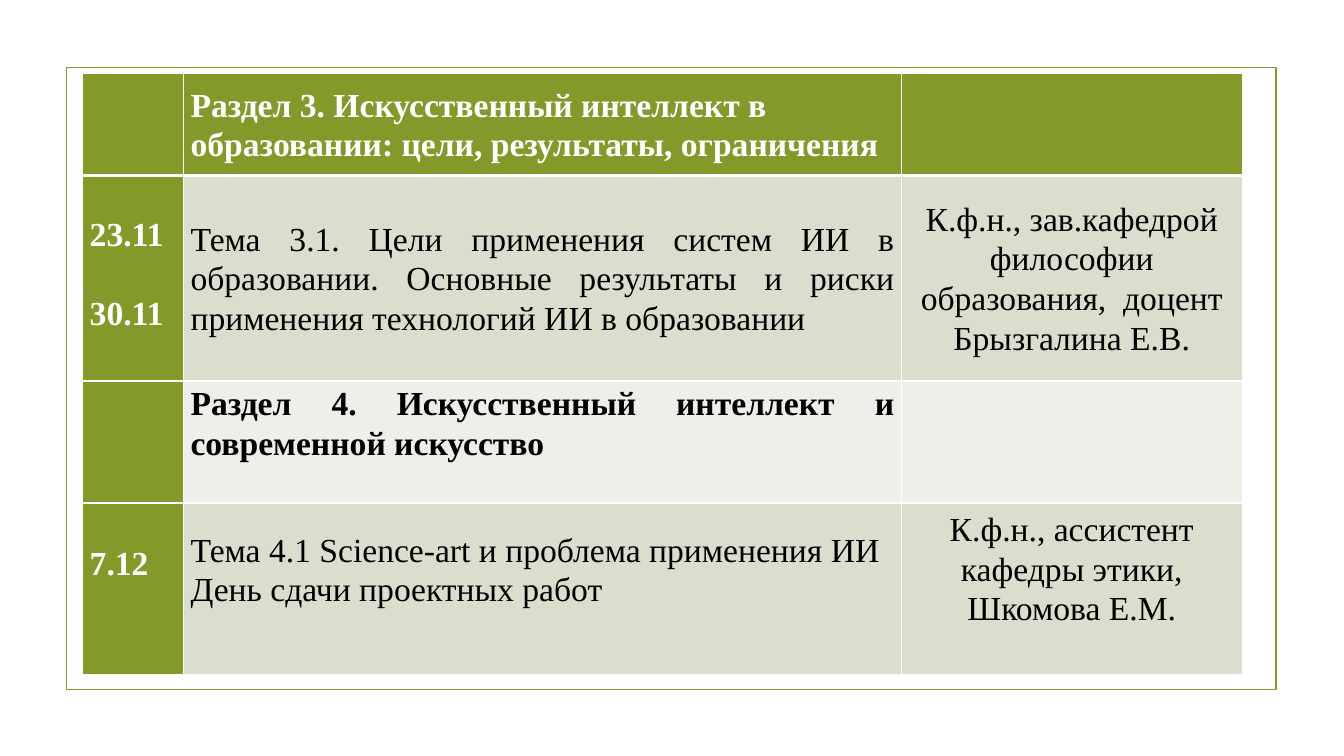
from lxml import etree
from pptx import Presentation
from pptx.dml.color import RGBColor
from pptx.enum.shapes import MSO_SHAPE
from pptx.enum.text import MSO_ANCHOR, PP_ALIGN
from pptx.oxml import parse_xml
from pptx.oxml.ns import nsdecls
from pptx.util import Inches, Pt

COLORS = {"olive": "83992A", "sage": "D9DECD", "pale": "EDEFE8",
          "white": "FFFFFF", "black": "000000"}
LEFT, JUSTIFY, CENTER = PP_ALIGN.LEFT, PP_ALIGN.JUSTIFY, PP_ALIGN.CENTER


def rgb(name):
    return RGBColor.from_string(COLORS[name])


def add_borders(cell, top, bottom):
    props = cell._tc.get_or_add_tcPr()
    widths = {"lnL": 1, "lnR": 1, "lnT": top, "lnB": bottom}
    for position, (side, width) in enumerate(widths.items()):
        props.insert(position, parse_xml(
            f'<a:{side} {nsdecls("a")} w="{Pt(width)}"><a:solidFill>'
            f'<a:srgbClr val="{COLORS["white"]}"/></a:solidFill></a:{side}>'))


prs = Presentation()
prs.slide_width, prs.slide_height = Inches(13.33), Inches(7.5)
slide = prs.slides.add_slide(prs.slide_layouts[6])

# Frame around the schedule
frame = slide.shapes.add_shape(MSO_SHAPE.RECTANGLE, Inches(0.66), Inches(0.67),
                               Inches(12), Inches(6.17))
frame.shadow.inherit = False
frame.fill.background()
frame.line.color.rgb = rgb("olive")
frame.line.width = Pt(1.25)

# Schedule content: row height, row fill, then date, topic and lecturer
# as (paragraphs, alignment, bold, top margin, bottom margin)
empty = ([], LEFT, False, 0, 0)
schedule = [
    (1.01, "olive", [
        empty,
        (["Раздел 3. Искусственный интеллект в образовании: цели, результаты, "
          "ограничения"], LEFT, True, 0, 0),
        empty]),
    (2.04, "sage", [
        (["23.11", "30.11"], JUSTIFY, True, 0.38, 0),
        (["Тема 3.1. Цели применения систем ИИ в образовании. Основные результаты "
          "и риски применения технологий ИИ в образовании"], JUSTIFY, False, 0, 0),
        (["К.ф.н., зав.кафедрой философии образования,  доцент Брызгалина Е.В."],
         CENTER, False, 0, 0)]),
    (1.21, "pale", [
        empty,
        (["Раздел 4. Искусственный интеллект и современной искусство"],
         JUSTIFY, True, 0, 0.38),
        empty]),
    (1.7, "sage", [
        (["7.12"], JUSTIFY, True, 0.4, 0),
        (["Тема 4.1 Science-art и проблема применения ИИ",
          "День сдачи проектных работ"], JUSTIFY, False, 0, 0.38),
        (["К.ф.н., ассистент кафедры этики, Шкомова Е.М."],
         CENTER, False, 0, 0.4)]),
]

# Table grid
table = slide.shapes.add_table(len(schedule), 3, Inches(0.82), Inches(0.73),
                               Inches(11.5), Inches(5.96)).table
table.horz_banding = False
for column, width in zip(table.columns, (1, 7.12, 3.38)):
    column.width = Inches(width)

# Cells
for r, (height, row_fill, entries) in enumerate(schedule):
    table.rows[r].height = Inches(height)
    for c, (paragraphs, align, bold, top, bottom) in enumerate(entries):
        cell = table.cell(r, c)
        on_olive = r == 0 or c == 0
        cell.fill.solid()
        cell.fill.fore_color.rgb = rgb("olive" if on_olive else row_fill)
        add_borders(cell, 3 if r == 1 else 1, 3 if r == 0 else 1)
        cell.margin_left = cell.margin_right = Inches(0.07)
        cell.margin_top, cell.margin_bottom = Inches(top), Inches(bottom)
        cell.vertical_anchor = MSO_ANCHOR.TOP if c == 0 else MSO_ANCHOR.MIDDLE
        for i, text in enumerate(paragraphs):
            frame_text = cell.text_frame
            para = frame_text.add_paragraph() if i else frame_text.paragraphs[0]
            para.text = text
            para.alignment = align
            para.line_spacing = 1.07
            if i and c == 0:  # one line of air between dates
                para.space_before = Pt(28)
            para.font.name = "Times New Roman"
            para.font.size = Pt(24)
            para.font.bold = bold
            para.font.color.rgb = rgb("white" if on_olive else "black")

prs.save("out.pptx")
